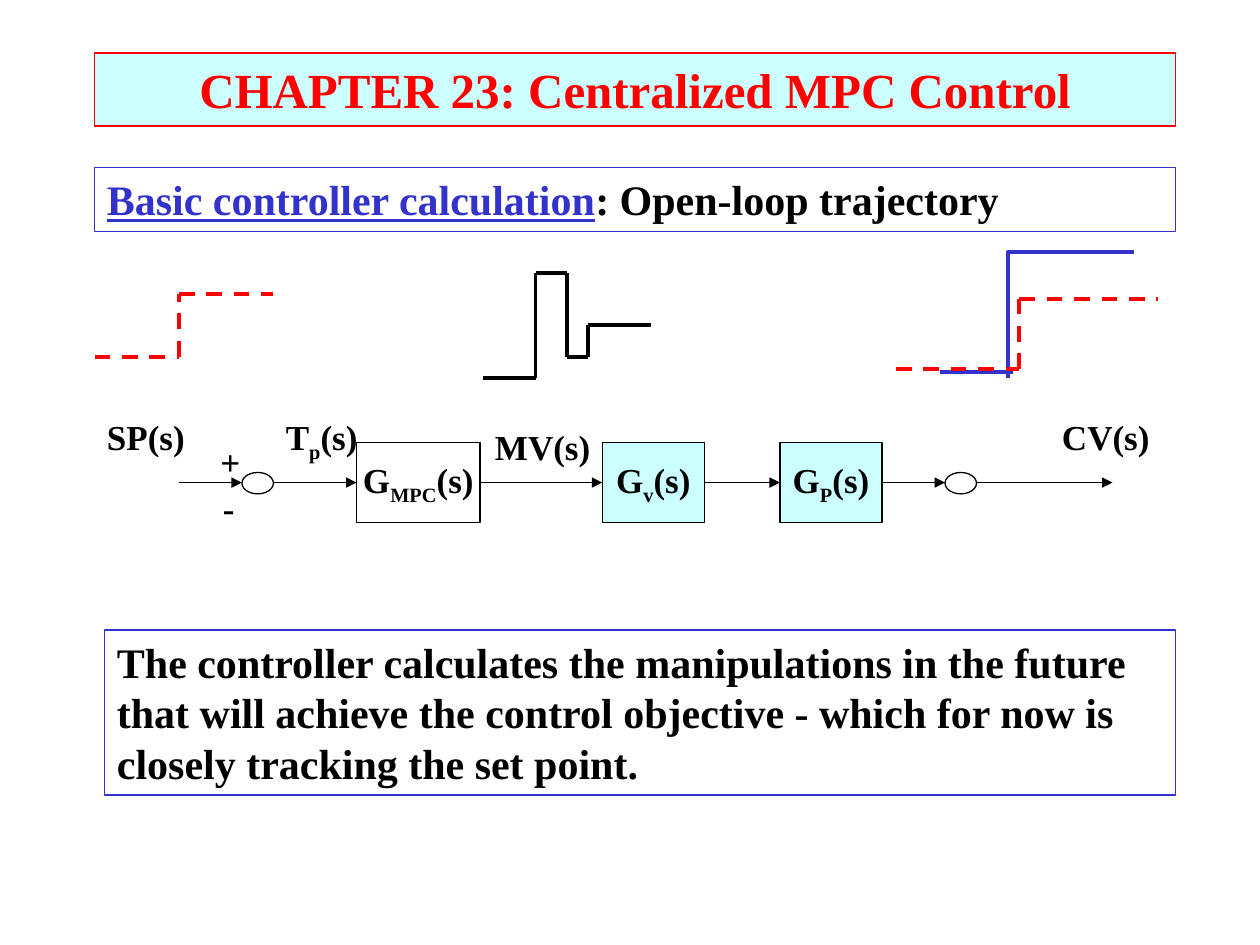
from dataclasses import dataclass
from itertools import pairwise
from typing import Optional

from lxml.etree import SubElement
from pptx import Presentation
from pptx.dml.color import RGBColor
from pptx.enum.dml import MSO_LINE
from pptx.enum.shapes import MSO_CONNECTOR, MSO_SHAPE
from pptx.enum.text import MSO_ANCHOR, PP_ALIGN
from pptx.oxml.ns import qn
from pptx.util import Inches, Pt

RED, BLUE, BLACK, CYAN = "FF0000", "3333CC", "000000", "CCFFFF"
FONT = "Times New Roman"
MID = 3.83  # height of the signal line

Point = tuple[float, float]


@dataclass
class Piece:
    text: str
    color: str = BLACK
    under: bool = False
    sub: bool = False


@dataclass
class Panel:
    at: tuple[float, float, float, float]
    words: list[Piece]
    size: int
    line: str
    fill: Optional[str] = None
    align: PP_ALIGN = PP_ALIGN.LEFT


@dataclass
class Block:
    left: float
    width: float
    sub: str
    fill: Optional[str]


@dataclass
class Label:
    left: float
    top: float
    width: float
    words: list[Piece]


@dataclass
class Trace:
    points: list[Point]
    color: str
    dash: bool = False


@dataclass
class Arrow:
    start: float
    end: float
    source: Optional[str] = None
    target: Optional[str] = None


def paint(form, code: str) -> None:
    form.rgb = RGBColor.from_string(code)


def write(shape, words: list[Piece], size: int, align=PP_ALIGN.LEFT, wrap=True) -> None:
    frame = shape.text_frame
    frame.word_wrap = wrap
    para = frame.paragraphs[0]
    para.alignment = align
    for piece in words:
        run = para.add_run()
        run.text = piece.text
        font = run.font
        font.name, font.size, font.bold = FONT, Pt(size), True
        font.underline = piece.under
        paint(font.color, piece.color)
        if piece.sub:
            run._r.get_or_add_rPr().set("baseline", "-25000")


def style(shape, line: str, width: float, fill: Optional[str] = None) -> None:
    shape.shadow.inherit = False
    if fill:
        shape.fill.solid()
        paint(shape.fill.fore_color, fill)
    else:
        shape.fill.background()
    paint(shape.line.color, line)
    shape.line.width = Pt(width)


def shape_at(slide, kind, at, line: str, fill: Optional[str] = None):
    shape = slide.shapes.add_shape(kind, *map(Inches, at))
    style(shape, line, 0.75, fill)
    return shape


def link(slide, start: Point, end: Point, color: str, width: float):
    line = slide.shapes.add_connector(MSO_CONNECTOR.STRAIGHT, *map(Inches, start + end))
    paint(line.line.color, color)
    line.line.width = Pt(width)
    SubElement(line._element.spPr, qn("a:effectLst"))
    return line


def draw_panel(slide, panel: Panel) -> None:
    shape = shape_at(slide, MSO_SHAPE.RECTANGLE, panel.at, panel.line, panel.fill)
    shape.text_frame.vertical_anchor = MSO_ANCHOR.TOP
    write(shape, panel.words, panel.size, panel.align)


def draw_block(slide, block: Block):
    at = (block.left, MID - 0.32, block.width, 0.64)
    shape = shape_at(slide, MSO_SHAPE.RECTANGLE, at, BLACK, block.fill)
    shape.text_frame.vertical_anchor = MSO_ANCHOR.MIDDLE
    write(shape, term("G", block.sub), 20, PP_ALIGN.CENTER, wrap=False)
    return shape


def draw_label(slide, label: Label) -> None:
    at = (label.left, label.top, label.width, 0.43)
    write(slide.shapes.add_textbox(*map(Inches, at)), label.words, 20)


def draw_trace(slide, trace: Trace) -> None:
    for start, end in pairwise(trace.points):
        line = link(slide, start, end, trace.color, 2.25)
        if trace.dash:
            line.line.dash_style = MSO_LINE.DASH


def draw_arrow(slide, arrow: Arrow, blocks: dict) -> None:
    line = link(slide, (arrow.start, MID), (arrow.end, MID), BLACK, 0.75)
    if arrow.source:
        line.begin_connect(blocks[arrow.source], 3)
    if arrow.target:
        line.end_connect(blocks[arrow.target], 1)
    SubElement(line.line._get_or_add_ln(), qn("a:tailEnd"), type="triangle")


def draw_curve(slide, knots: list[Point], color: str, steps: int = 12) -> None:
    """Draw a chain of cubic curves: a start, then three points for each."""
    points = [knots[0]]
    for i in range(0, len(knots) - 1, 3):
        for n in range(1, steps + 1):
            t = n / steps
            mix = ((1 - t) ** 3, 3 * t * (1 - t) ** 2, 3 * t * t * (1 - t), t ** 3)
            points.append(tuple(sum(m * k[axis] for m, k in zip(mix, knots[i:i + 4]))
                                for axis in (0, 1)))
    pen = slide.shapes.build_freeform(*points[0], scale=Inches(1))
    pen.add_line_segments(points[1:], close=False)
    style(pen.convert_to_shape(), color, 2.25)


def term(name: str, sub: str) -> list[Piece]:
    return [Piece(name), Piece(sub, sub=True), Piece("(s)")]


PANELS = [
    Panel((0.75, 0.42, 8.58, 0.58), [Piece("CHAPTER 23: Centralized MPC Control", RED)],
          28, RED, CYAN, PP_ALIGN.CENTER),
    Panel((0.75, 1.33, 8.58, 0.51), [Piece("Basic controller calculation", BLUE, under=True),
                                     Piece(": Open-loop trajectory")], 24, BLUE),
    Panel((0.83, 5, 8.5, 1.31), [Piece(
        "The controller calculates the manipulations in the future that will achieve the "
        "control objective - which for now is closely tracking the set point.")], 24, BLUE),
]
BLOCKS = [Block(2.83, 0.98, "MPC", None), Block(4.78, 0.81, "v", CYAN),
          Block(6.19, 0.81, "P", CYAN)]
ARROWS = [Arrow(1.42, 1.92), Arrow(2.17, 2.83, target="MPC"),
          Arrow(3.81, 4.78, "MPC", "v"), Arrow(5.59, 6.19, "v", "P"),
          Arrow(7, 7.5, source="P"), Arrow(7.75, 8.83)]
LABELS = [
    Label(0.75, 3.25, 0.92, [Piece("SP(s)")]), Label(2.17, 3.25, 1.08, term("T", "p")),
    Label(3.83, 3.33, 1.08, [Piece("MV(s)")]), Label(8.33, 3.25, 0.92, [Piece("CV(s)")]),
    Label(1.65, 3.45, 0.36, [Piece("+")]), Label(1.67, 3.81, 0.29, [Piece("-")]),
]
SET_POINT = Trace([(0.75, 2.83), (1.42, 2.83), (1.42, 2.33), (2.17, 2.33)], RED, True)
MOVES = Trace([(3.83, 3), (4.25, 3), (4.25, 2.17), (4.5, 2.17), (4.5, 2.83),
               (4.67, 2.83), (4.67, 2.58), (5.17, 2.58)], BLACK)
BASE = Trace([(7.46, 2.95), (8.04, 2.95)], BLUE)
TARGET = Trace([(7.11, 2.93), (8.09, 2.93), (8.09, 2.37), (9.19, 2.37)], RED, True)
CURVE = [(8, 2.94), (8.1, 2.92), (8.19, 2.9), (8.25, 2.86), (8.31, 2.82), (8.32, 2.75),
         (8.33, 2.69), (8.35, 2.64), (8.32, 2.58), (8.33, 2.53), (8.35, 2.47),
         (8.35, 2.39), (8.42, 2.36), (8.49, 2.33), (8.63, 2.36), (8.75, 2.36),
         (8.88, 2.36), (9.02, 2.36), (9.17, 2.36)]


def main() -> None:
    deck = Presentation()
    deck.slide_width, deck.slide_height = Inches(10), Inches(7.5)
    slide = deck.slides.add_slide(deck.slide_layouts[6])

    # Title, topic and conclusion
    for panel in PANELS:
        draw_panel(slide, panel)

    # Block diagram
    blocks = {block.sub: draw_block(slide, block) for block in BLOCKS}
    for left in (1.92, 7.5):
        shape_at(slide, MSO_SHAPE.OVAL, (left, 3.75, 0.25, 0.17), BLACK)
    for arrow in ARROWS:
        draw_arrow(slide, arrow, blocks)
    for label in LABELS:
        draw_label(slide, label)

    # Signals over time
    for trace in (SET_POINT, MOVES, BASE):
        draw_trace(slide, trace)
    draw_curve(slide, CURVE, BLUE)
    draw_trace(slide, TARGET)

    deck.save("out.pptx")


if __name__ == "__main__":
    main()
